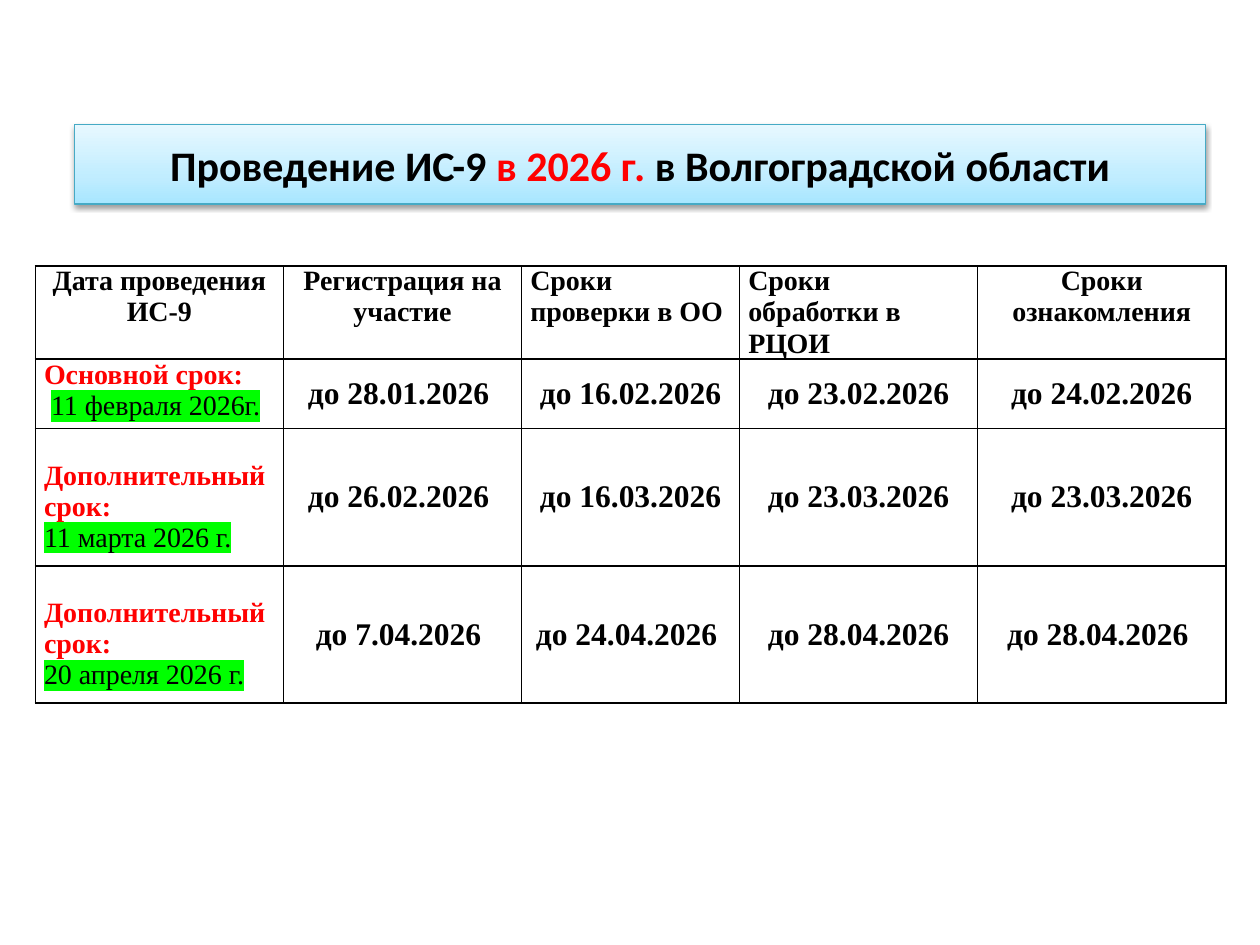
from copy import deepcopy

from lxml import etree
from pptx import Presentation
from pptx.dml.color import RGBColor
from pptx.enum import shapes, text
from pptx.oxml import ns
from pptx.util import Inches, Pt

BLACK, RED, GREEN = "000000", "FF0000", "00FF00"
CENTER, LEFT, JUSTIFY = text.PP_ALIGN.CENTER, text.PP_ALIGN.LEFT, text.PP_ALIGN.JUSTIFY
COLUMNS = [1.97, 1.89, 1.73, 1.89, 1.97]
ROWS = [0.55, 0.55, 1.09, 1.09]
LINE = 0.25  # height of one 16 pt line
MARGIN = 0.07

# heading, alignment, right margin
HEADINGS = [
    ("Дата проведения ИС-9", CENTER, MARGIN),
    ("Регистрация на участие", CENTER, MARGIN),
    ("Сроки проверки в ОО", LEFT, MARGIN),
    ("Сроки обработки в РЦОИ", LEFT, 0.2),
    ("Сроки ознакомления", CENTER, MARGIN),
]
# label, indent before the date, date, alignment, top margin, deadlines
PERIODS = [
    ("Основной срок:", " ", "11 февраля 2026г.", LEFT, 0,
     ["до 28.01.2026 ", "до 16.02.2026", "до 23.02.2026", "до 24.02.2026"]),
    ("Дополнительный срок: ", "", "11 марта 2026 г.", JUSTIFY, LINE,
     ["до 26.02.2026 ", "до 16.03.2026", "до 23.03.2026", "до 23.03.2026"]),
    ("Дополнительный срок: ", "", "20 апреля 2026 г.", JUSTIFY, LINE,
     ["до 7.04.2026 ", "до 24.04.2026 ", "до 28.04.2026", "до 28.04.2026 "]),
]


def rgb(value):
    return RGBColor.from_string(value)


def add_xml(parent, tag, **attributes):
    return etree.SubElement(parent, ns.qn(tag), attributes)


def add_span(para, words, color=BLACK, highlight=None):
    span = para.add_run()
    span.text = words
    span.font.color.rgb = rgb(color)
    if highlight:
        mark = add_xml(span.font._element, "a:highlight")
        add_xml(mark, "a:srgbClr", val=highlight)


def style(para, size, font="Times New Roman", bold=True, align=CENTER):
    para.alignment = align
    para.font.name = font
    para.font.size = Pt(size)
    para.font.bold = bold


def fill_gradient(shape, stops):
    """Fill bottom to top with three (position, colour) stops."""
    shape.fill.gradient()
    shape.fill.gradient_angle = 90
    first = shape._element.spPr.find(".//" + ns.qn("a:gs"))
    first.addnext(deepcopy(first))
    for stop, (position, color) in zip(shape.fill.gradient_stops, stops):
        stop.position = position
        stop.color.rgb = rgb(color)


def add_shadow(shape):
    shape.shadow.inherit = False
    effects = shape._element.spPr.find(ns.qn("a:effectLst"))
    shadow = add_xml(effects, "a:outerShdw", blurRad=str(Pt(3.1)), dist=str(Pt(1.6)),
                     dir="5400000", rotWithShape="0")
    color = add_xml(shadow, "a:srgbClr", val=BLACK)
    add_xml(color, "a:alpha", val="38000")


def add_title(page):
    box = page.shapes.add_shape(shapes.MSO_SHAPE.RECTANGLE, Inches(0.59), Inches(0.99),
                                Inches(8.98), Inches(0.63))
    fill_gradient(box, [(0, "A7E6FF"), (0.35, "C1EDFF"), (1, "E7F8FF")])
    box.line.color.rgb = rgb("46AAC5")
    box.line.width = Pt(0.75)
    add_shadow(box)
    box.text_frame.vertical_anchor = text.MSO_ANCHOR.MIDDLE
    para = box.text_frame.paragraphs[0]
    style(para, 24, font="Calibri")
    add_span(para, "Проведение ИС-9 ")
    add_span(para, "в 2026 г. ", RED)
    add_span(para, "в Волгоградской области")


def frame_cell(cell):
    """Clear the fill, set the margins and draw all four borders."""
    cell.margin_left = cell.margin_right = Inches(MARGIN)
    cell.margin_top = cell.margin_bottom = 0
    cell.fill.background()
    properties = cell._tc.get_or_add_tcPr()
    for index, side in enumerate(("a:lnL", "a:lnR", "a:lnT", "a:lnB")):
        border = add_xml(properties, side, w=str(Pt(1)))
        add_xml(add_xml(border, "a:solidFill"), "a:srgbClr", val=BLACK)
        properties.insert(index, border)


def write_cell(cell, words, size, align=CENTER):
    para = cell.text_frame.paragraphs[0]
    style(para, size, align=align)
    add_span(para, words)


def write_period(cell, label, indent, date, align, top):
    cell.margin_top = Inches(top)
    para = cell.text_frame.paragraphs[0]
    style(para, 16, align=align)
    add_span(para, label, RED)
    para = cell.text_frame.add_paragraph()
    style(para, 16, bold=False, align=align)
    if indent:
        add_span(para, indent)
    add_span(para, date, highlight=GREEN)


def add_schedule(page):
    table = page.shapes.add_table(len(ROWS), len(COLUMNS), Inches(0.28), Inches(2.11),
                                  Inches(sum(COLUMNS)), Inches(sum(ROWS))).table
    table.first_row = table.horz_banding = False
    for column, width in zip(table.columns, COLUMNS):
        column.width = Inches(width)
    for row, height in zip(table.rows, ROWS):
        row.height = Inches(height)
    for cell in table.iter_cells():
        frame_cell(cell)
    for column, (heading, align, margin) in enumerate(HEADINGS):
        cell = table.cell(0, column)
        cell.margin_right = Inches(margin)
        write_cell(cell, heading, 16, align)
    for row, (*period, deadlines) in enumerate(PERIODS, 1):
        write_period(table.cell(row, 0), *period)
        for column, deadline in enumerate(deadlines, 1):
            cell = table.cell(row, column)
            cell.vertical_anchor = text.MSO_ANCHOR.MIDDLE
            write_cell(cell, deadline, 18)


def main():
    deck = Presentation()
    deck.slide_width, deck.slide_height = Inches(10), Inches(7.5)
    page = deck.slides.add_slide(deck.slide_layouts[6])
    add_title(page)
    add_schedule(page)
    deck.save("out.pptx")


if __name__ == "__main__":
    main()
